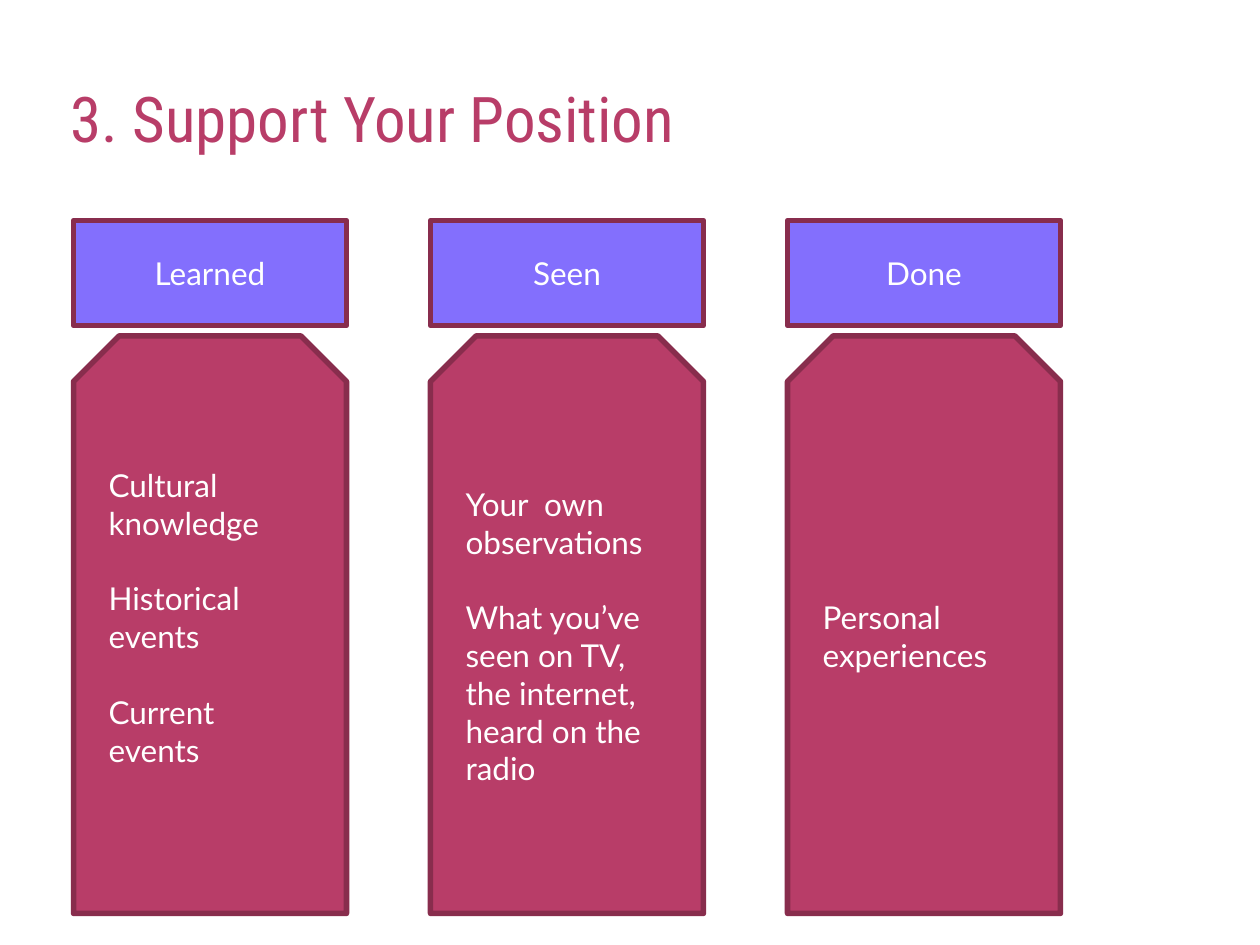
from pptx import Presentation
from pptx.dml.color import RGBColor
from pptx.enum.shapes import MSO_SHAPE
from pptx.enum.text import MSO_ANCHOR, MSO_AUTO_SIZE, PP_ALIGN
from pptx.util import Pt

RECTANGLE = MSO_SHAPE.RECTANGLE
SNIPPED = MSO_SHAPE.SNIP_2_SAME_RECTANGLE
TOP, MIDDLE = MSO_ANCHOR.TOP, MSO_ANCHOR.MIDDLE
LEFT, CENTER = PP_ALIGN.LEFT, PP_ALIGN.CENTER
NO_AUTOFIT = MSO_AUTO_SIZE.NONE

COLORS = {
    "rose": "B83D68",
    "wine": "882D4D",
    "violet": "836FFD",
    "white": "FFFFFF",
}
LINE_GAP = 21.6
COLUMN_LEFT, COLUMN_PITCH, COLUMN_WIDTH = 42, 204, 156

columns = [
    ("Learned", [("Cultural knowledge", 0), ("Historical events", LINE_GAP),
                 ("Current events", LINE_GAP)], LINE_GAP),
    ("Seen", [("Your  own observations", 0),
              ("What you’ve seen on TV, the internet,", LINE_GAP),
              ("heard on the radio", 0)], 0),
    ("Done", [("Personal experiences", 0)], 0),
]


def write(frame, paragraphs, font="Lato", size=18, color="white",
          align=LEFT, anchor=MIDDLE, extra_bottom=0):
    frame.auto_size = NO_AUTOFIT
    frame.word_wrap = True
    frame.vertical_anchor = anchor
    frame.margin_bottom = Pt(3.6 + extra_bottom)
    for index, (text, gap) in enumerate(paragraphs):
        paragraph = frame.paragraphs[0] if index == 0 else frame.add_paragraph()
        paragraph.alignment = align
        paragraph.space_before = Pt(gap)
        run = paragraph.add_run()
        run.text = text
        run.font.name = font
        run.font.size = Pt(size)
        run.font.color.rgb = RGBColor.from_string(COLORS[color])


def add_block(shapes, kind, left, top, height, fill):
    block = shapes.add_shape(kind, Pt(left), Pt(top), Pt(COLUMN_WIDTH), Pt(height))
    block.shadow.inherit = False
    block.fill.solid()
    block.fill.fore_color.rgb = RGBColor.from_string(COLORS[fill])
    block.line.color.rgb = RGBColor.from_string(COLORS["wine"])
    block.line.width = Pt(3.15)
    return block


prs = Presentation()
prs.slide_width, prs.slide_height = Pt(720), Pt(540)
slide = prs.slides.add_slide(prs.slide_layouts[5])

title = slide.shapes.title
title.left, title.top, title.width, title.height = Pt(31), Pt(42), Pt(364), Pt(50)
write(title.text_frame, [("3. Support Your Position", 0)], font="Roboto Condensed",
      size=36, color="rose", align=CENTER, anchor=TOP)

for number, (heading, examples, extra_bottom) in enumerate(columns):
    left = COLUMN_LEFT + number * COLUMN_PITCH
    evidence = add_block(slide.shapes, SNIPPED, left, 192, 330, "rose")
    write(evidence.text_frame, examples, extra_bottom=extra_bottom)

headings = slide.shapes.add_group_shape()
for number, (heading, examples, extra_bottom) in enumerate(columns):
    left = COLUMN_LEFT + number * COLUMN_PITCH
    header = add_block(headings.shapes, RECTANGLE, left, 126, 60, "violet")
    write(header.text_frame, [(heading, 0)], align=CENTER)

prs.save("out.pptx")
